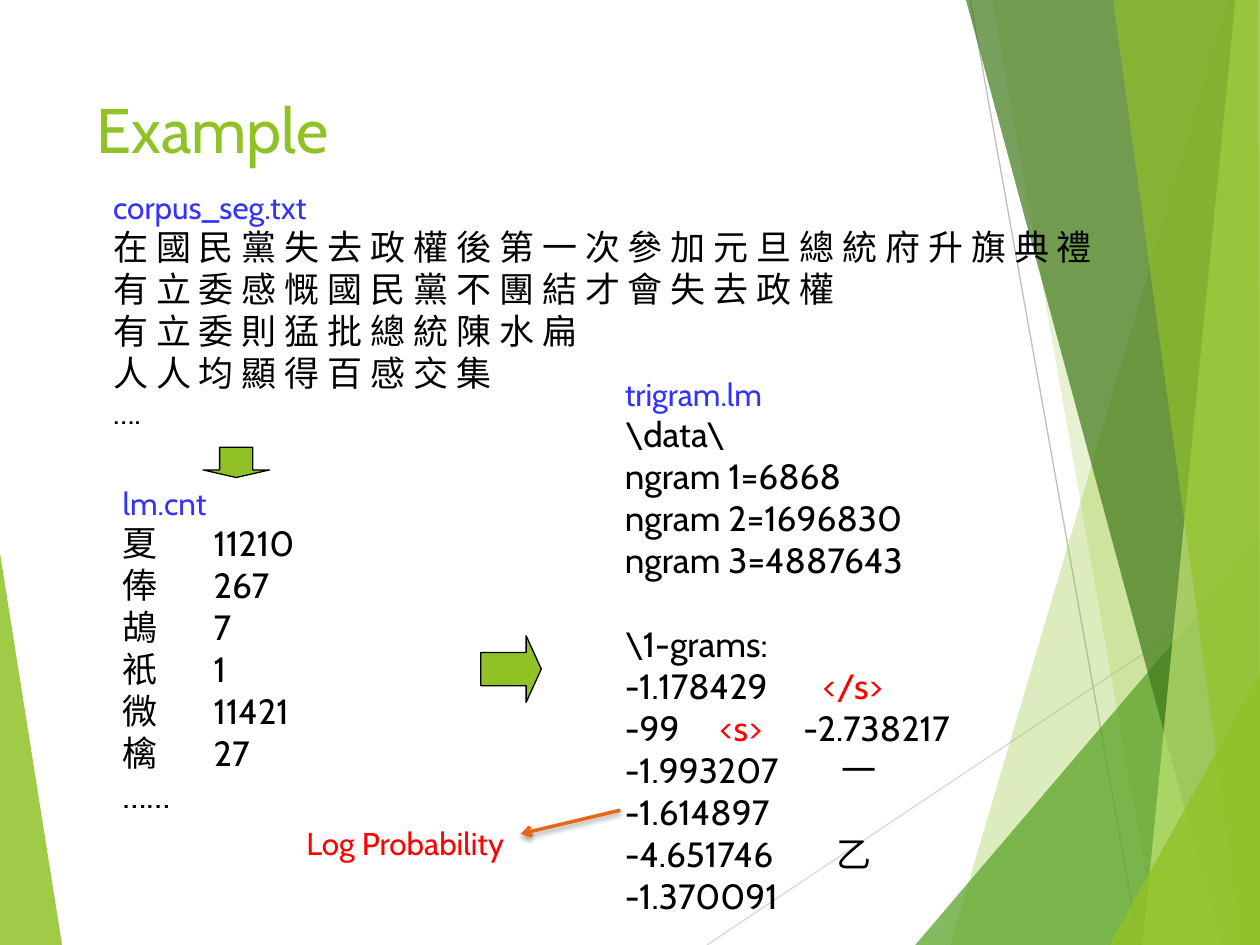
from dataclasses import dataclass

from lxml.etree import SubElement
from pptx import Presentation
from pptx.dml.color import RGBColor
from pptx.enum.shapes import MSO_CONNECTOR, MSO_SHAPE
from pptx.enum.text import MSO_ANCHOR, MSO_AUTO_SIZE, PP_ALIGN
from pptx.oxml.ns import qn
from pptx.util import Pt


@dataclass(frozen=True)
class Theme:
    font: str = "Cabin"
    title_size: int = 36
    label_size: int = 18
    body_size: int = 20
    green: str = "90C226"
    mid_green: str = "54A021"
    dark_green: str = "3F7819"
    pale_green: str = "C0E474"
    blue: str = "3333FF"
    red: str = "FF0000"
    black: str = "000000"
    orange: str = "E76618"
    light_gray: str = "D9D9D9"
    gray: str = "BFBFBF"


THEME = Theme()
WIDTH, HEIGHT = 720, 540

LEFT_FACET = (THEME.green, 85, [(0, 316), (35.5, HEIGHT), (0, HEIGHT)])
RIGHT_FACETS = [
    (THEME.green, 30, [(702, 0), (543, HEIGHT), (WIDTH, HEIGHT), (WIDTH, 0)]),
    (THEME.green, 20, [(567, 0), (662, HEIGHT), (WIDTH, HEIGHT), (WIDTH, 0)]),
    (THEME.mid_green, 72, [(523, HEIGHT), (WIDTH, 309), (WIDTH, HEIGHT)]),
    (THEME.dark_green, 70, [(552, 0), (698, HEIGHT), (WIDTH, HEIGHT), (WIDTH, 0)]),
    (THEME.pale_green, 70, [(706, 0), (653, HEIGHT), (WIDTH, HEIGHT), (WIDTH, 0)]),
    (THEME.green, 65, [(636, 0), (710, HEIGHT), (WIDTH, HEIGHT), (719, 0)]),
    (THEME.green, 80, [(634, HEIGHT), (WIDTH, 385), (WIDTH, HEIGHT)]),
]


@dataclass(frozen=True)
class Line:
    """One paragraph: text or (text, color) runs, with its tab stops."""
    content: object
    tabs: tuple = ()
    before: float = 0
    size: int = THEME.body_size
    color: str = THEME.black


def label(text, color=THEME.blue):
    return Line(text, size=THEME.label_size, color=color)


CORPUS = [
    label("corpus_seg.txt"),
    Line("在 國 民 黨 失 去 政 權 後 第 一 次 參 加 元 旦 總 統 府 升 旗 典 禮"),
    Line("有 立 委 感 慨 國 民 黨 不 團 結 才 會 失 去 政 權"),
    Line("有 立 委 則 猛 批 總 統 陳 水 扁"),
    Line("人 人 均 顯 得 百 感 交 集"),
    label("….", THEME.black),
]
COUNTS = [("夏", 11210), ("俸", 267), ("鴣", 7), ("衹", 1), ("微", 11421), ("檎", 27)]
COUNT_LINES = [
    label("lm.cnt"),
    *(Line(f"{word}\t{count}", tabs=(52,)) for word, count in COUNTS),
    Line("……"),
]
TRIGRAM = [
    label("trigram.lm"),
    Line("\\data\\"),
    Line("ngram 1=6868"),
    Line("ngram 2=1696830"),
    Line("ngram 3=4887643"),
    Line("\\1-grams:", before=24),
    Line([("-1.178429\t", THEME.black), ("</s>", THEME.red)], tabs=(113,)),
    Line([("-99\t", THEME.black), ("<s>", THEME.red), ("\t-2.738217", THEME.black)],
         tabs=(54, 102)),
    Line("-1.993207\t一\v-1.614897", tabs=(124,)),
    Line("-4.651746\t乙\v-1.370091", tabs=(121,)),
]


def set_font(font, size, color):
    font.name = THEME.font
    font.size = Pt(size)
    font.color.rgb = RGBColor.from_string(color)


def add_facet(slide, color, opacity, points):
    """Draw one translucent polygon of the background."""
    start, *others = [(Pt(x), Pt(y)) for x, y in points]
    builder = slide.shapes.build_freeform(*start)
    builder.add_line_segments(others)
    facet = builder.convert_to_shape()
    facet.shadow.inherit = False
    facet.fill.solid()
    facet.fill.fore_color.rgb = RGBColor.from_string(color)
    facet.line.fill.background()
    color_element = facet.fill._xPr.find(f"{qn('a:solidFill')}/{qn('a:srgbClr')}")
    SubElement(color_element, qn("a:alpha"), val=str(opacity * 1000))


def add_line(slide, start, end, color, width):
    """Draw a straight line and return it with its empty effect list."""
    line = slide.shapes.add_connector(
        MSO_CONNECTOR.STRAIGHT, *(Pt(value) for value in (*start, *end)))
    line.line.color.rgb = RGBColor.from_string(color)
    line.line.width = Pt(width)
    effects = SubElement(line.element.spPr, qn("a:effectLst"))
    return line, effects


def add_pointer(slide, start, end):
    """Draw the shadowed arrow from a value to its caption."""
    pointer, effects = add_line(slide, start, end, THEME.orange, 2)
    SubElement(pointer.line._get_or_add_ln(), qn("a:tailEnd"), type="arrow")
    shadow = SubElement(effects, qn("a:outerShdw"), blurRad=str(Pt(3)),
                        dist=str(Pt(2)), dir="5400000", rotWithShape="0")
    shadow_color = SubElement(shadow, qn("a:srgbClr"), val=THEME.black)
    SubElement(shadow_color, qn("a:alpha"), val="35000")


def add_block_arrow(slide, left, top, width, height, rotation=0):
    arrow = slide.shapes.add_shape(
        MSO_SHAPE.DOWN_ARROW, Pt(left), Pt(top), Pt(width), Pt(height))
    arrow.adjustments[1] = 0.25
    arrow.rotation = rotation
    arrow.shadow.inherit = False
    arrow.fill.solid()
    arrow.fill.fore_color.rgb = RGBColor.from_string(THEME.green)
    arrow.line.color.rgb = RGBColor.from_string(THEME.black)
    arrow.line.width = Pt(0.75)


def set_tabs(paragraph, positions):
    tab_list = SubElement(paragraph._p.get_or_add_pPr(), qn("a:tabLst"))
    for position in positions:
        SubElement(tab_list, qn("a:tab"), pos=str(Pt(position)), algn="l")


def add_text(slide, left, top, width, height, lines):
    box = slide.shapes.add_textbox(Pt(left), Pt(top), Pt(width), Pt(height))
    frame = box.text_frame
    frame.word_wrap = True
    frame.auto_size = MSO_AUTO_SIZE.SHAPE_TO_FIT_TEXT
    for index, line in enumerate(lines):
        paragraph = frame.add_paragraph() if index else frame.paragraphs[0]
        if line.tabs:
            set_tabs(paragraph, line.tabs)
        if line.before:
            paragraph.space_before = Pt(line.before)
        set_font(paragraph.font, line.size, line.color)
        if isinstance(line.content, str):
            paragraph.text = line.content
            continue
        for text, color in line.content:
            run = paragraph.add_run()
            run.text = text
            run.font.color.rgb = RGBColor.from_string(color)


def set_title(slide, text):
    title = slide.shapes.title
    title.left, title.top, title.width, title.height = Pt(48), Pt(48), Pt(500), Pt(104)
    title.text_frame.text = text
    title.text_frame.vertical_anchor = MSO_ANCHOR.TOP
    paragraph = title.text_frame.paragraphs[0]
    paragraph.alignment = PP_ALIGN.LEFT
    set_font(paragraph.font, THEME.title_size, THEME.green)
    # Bring the title in front of the background facets.
    title.element.getparent().append(title.element)


def main():
    presentation = Presentation()
    presentation.slide_width, presentation.slide_height = Pt(WIDTH), Pt(HEIGHT)
    slide = presentation.slides.add_slide(presentation.slide_layouts[5])

    add_facet(slide, *LEFT_FACET)
    add_line(slide, (404, HEIGHT), (WIDTH, 329), THEME.light_gray, 0.75)
    add_line(slide, (554.5, 0), (651, HEIGHT), THEME.gray, 0.75)
    for facet in RIGHT_FACETS:
        add_facet(slide, *facet)

    set_title(slide, "Example")
    add_text(slide, 57.6, 103.7, 618, 153, CORPUS)
    add_text(slide, 63, 273, 123, 204, COUNT_LINES)
    add_text(slide, 350, 210.5, 270, 303, TRIGRAM)
    add_block_arrow(slide, 116, 255.6, 38, 17.3)
    add_block_arrow(slide, 273, 365, 38, 34.6, rotation=270)
    add_pointer(slide, (354.5, 463), (297.5, 476.5))
    add_text(slide, 168, 467.5, 142, 29, [label("Log Probability", THEME.red)])

    presentation.save("out.pptx")


if __name__ == "__main__":
    main()
